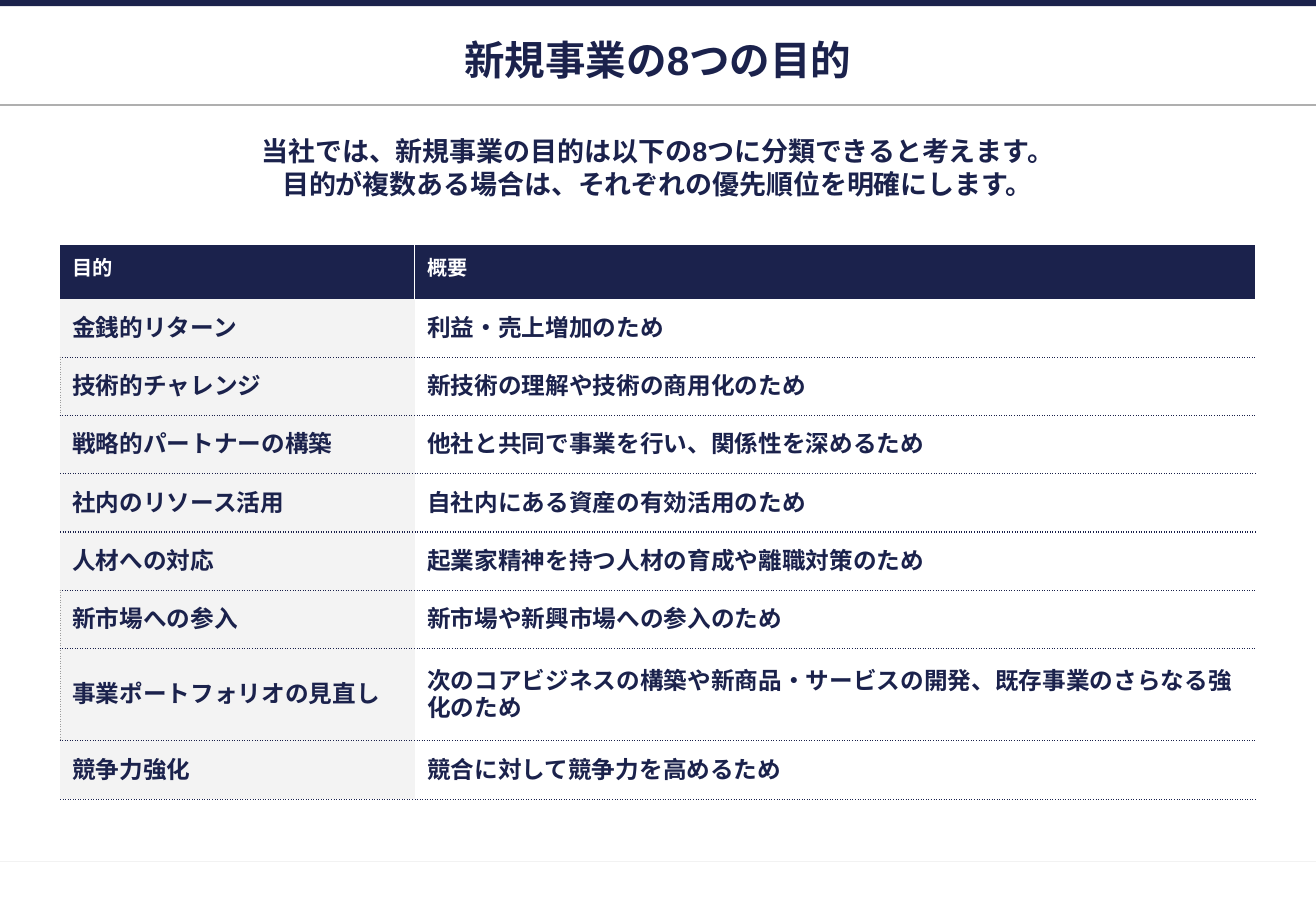
from dataclasses import dataclass
from typing import Optional

from lxml.etree import SubElement
from pptx import Presentation
from pptx.dml.color import RGBColor
from pptx.enum.shapes import MSO_CONNECTOR, MSO_SHAPE
from pptx.enum.text import MSO_ANCHOR, PP_ALIGN
from pptx.oxml.ns import qn
from pptx.slide import Slide
from pptx.table import _Cell
from pptx.text.text import _Paragraph
from pptx.util import Emu, Pt


@dataclass(frozen=True)
class Theme:
    font: str = "Arial"
    navy: str = "1B224C"
    white: str = "FFFFFF"
    label_fill: str = "F3F3F3"
    title_rule: str = "AFAFAF"
    footer_rule: str = "F2F2F2"
    label_edge: str = "9E9E9E"
    title_size: int = 24
    lead_size: int = 16
    header_size: int = 12
    cell_size: int = 14
    rule_width: float = 0.75


@dataclass(frozen=True)
class TextBlock:
    left: int
    top: int
    width: int
    height: int
    lines: tuple[str, ...]
    size: int
    anchor: MSO_ANCHOR
    bottom_inset: int


@dataclass(frozen=True)
class Rule:
    top: int
    color: str


@dataclass(frozen=True)
class Purpose:
    name: str
    summary: str
    has_left_edge: bool = False
    height: int = 96


@dataclass(frozen=True)
class Edge:
    color: str
    dash: str


THEME = Theme()
PAGE_WIDTH, PAGE_HEIGHT = 2166, 1500
MARGIN, CONTENT_WIDTH = 99, 1968
TABLE_TOP, HEADER_HEIGHT, TWO_LINE_HEIGHT = 404, 88, 152
COLUMN_WIDTHS = (584, 1384)
TEXT_INSET, CELL_INSET = 8, 20
NO_STYLE_TABLE = "{2D5ABB26-0587-4C30-8999-92F81FD0307C}"

RULES = (Rule(1418, THEME.footer_rule), Rule(173, THEME.title_rule))
TEXT_BLOCKS = (
    TextBlock(MARGIN, 214, CONTENT_WIDTH, 150,
              ("当社では、新規事業の目的は以下の8つに分類できると考えます。",
               "目的が複数ある場合は、それぞれの優先順位を明確にします。"),
              THEME.lead_size, MSO_ANCHOR.TOP, TEXT_INSET),
    TextBlock(MARGIN, 60, CONTENT_WIDTH, 78, ("新規事業の8つの目的",),
              THEME.title_size, MSO_ANCHOR.MIDDLE, 10),
)
HEADINGS = ("目的", "概要")
PURPOSES = (
    Purpose("金銭的リターン", "利益・売上増加のため"),
    Purpose("技術的チャレンジ", "新技術の理解や技術の商用化のため", True),
    Purpose("戦略的パートナーの構築", "他社と共同で事業を行い、関係性を深めるため"),
    Purpose("社内のリソース活用", "自社内にある資産の有効活用のため"),
    Purpose("人材への対応", "起業家精神を持つ人材の育成や離職対策のため"),
    Purpose("新市場への参入", "新市場や新興市場への参入のため", True),
    Purpose("事業ポートフォリオの見直し",
            "次のコアビジネスの構築や新商品・サービスの開発、既存事業のさらなる強化のため",
            True, TWO_LINE_HEIGHT),
    Purpose("競争力強化", "競合に対して競争力を高めるため"),
)
DIVIDER = Edge(THEME.navy, "dot")
LABEL_EDGE = Edge(THEME.label_edge, "dot")
HEADER_EDGE = Edge(THEME.white, "solid")


def px(length: int) -> Emu:
    return Emu(length * 4572)


def rgb(color: str) -> RGBColor:
    return RGBColor.from_string(color)


def style_paragraph(para: _Paragraph, size: int, color: str) -> None:
    font = para.font
    font.name = THEME.font
    font.size = Pt(size)
    font.bold = True
    font.color.rgb = rgb(color)
    for script in ("a:ea", "a:cs"):
        SubElement(font._element, qn(script), typeface=THEME.font)


def draw_rule(page: Slide, rule: Rule) -> None:
    line = page.shapes.add_connector(
        MSO_CONNECTOR.STRAIGHT, px(0), px(rule.top), px(PAGE_WIDTH), px(rule.top))
    line.line.color.rgb = rgb(rule.color)
    line.line.width = Pt(THEME.rule_width)
    SubElement(line._element.spPr, qn("a:effectLst"))


def draw_top_band(page: Slide) -> None:
    band = page.shapes.add_shape(MSO_SHAPE.RECTANGLE, px(0), px(0), px(PAGE_WIDTH), px(10))
    band.shadow.inherit = False
    band.fill.solid()
    band.fill.fore_color.rgb = rgb(THEME.navy)
    band.line.fill.background()


def draw_text(page: Slide, block: TextBlock) -> None:
    box = page.shapes.add_textbox(
        px(block.left), px(block.top), px(block.width), px(block.height))
    frame = box.text_frame
    frame.word_wrap = True
    frame.vertical_anchor = block.anchor
    frame.margin_left = frame.margin_right = frame.margin_top = px(TEXT_INSET)
    frame.margin_bottom = px(block.bottom_inset)
    frame.text = "\n".join(block.lines)
    for para in frame.paragraphs:
        para.alignment = PP_ALIGN.CENTER
        style_paragraph(para, block.size, THEME.navy)


def set_borders(cell: _Cell, left: Optional[Edge] = None, right: Optional[Edge] = None,
                top: Optional[Edge] = None, bottom: Optional[Edge] = None) -> None:
    properties = cell._tc.get_or_add_tcPr()
    for side, edge in zip("LRTB", (left, right, top, bottom)):
        border = SubElement(properties, qn(f"a:ln{side}"), w=str(Pt(THEME.rule_width)))
        if edge is None:
            SubElement(border, qn("a:noFill"))
            continue
        fill = SubElement(border, qn("a:solidFill"))
        SubElement(fill, qn("a:srgbClr"), val=edge.color)
        SubElement(border, qn("a:prstDash"), val=edge.dash)


def fill_cell(cell: _Cell, text: str, size: int, color: str, fill: str,
              anchor: MSO_ANCHOR) -> None:
    cell.fill.solid()
    cell.fill.fore_color.rgb = rgb(fill)
    cell.vertical_anchor = anchor
    cell.margin_left = cell.margin_right = px(CELL_INSET)
    cell.margin_top = cell.margin_bottom = px(CELL_INSET)
    cell.text = text
    style_paragraph(cell.text_frame.paragraphs[0], size, color)


def draw_purpose_table(page: Slide) -> None:
    heights = (HEADER_HEIGHT, *(purpose.height for purpose in PURPOSES))
    table = page.shapes.add_table(
        len(heights), len(HEADINGS), px(MARGIN), px(TABLE_TOP),
        px(CONTENT_WIDTH), px(sum(heights))).table
    table.horz_banding = False
    table._tbl.tblPr.find(qn("a:tableStyleId")).text = NO_STYLE_TABLE
    for column, width in zip(table.columns, COLUMN_WIDTHS):
        column.width = px(width)
    for row, height in zip(table.rows, heights):
        row.height = px(height)

    for index, heading in enumerate(HEADINGS):
        cell = table.cell(0, index)
        set_borders(cell, left=HEADER_EDGE if index else None, right=HEADER_EDGE)
        fill_cell(cell, heading, THEME.header_size, THEME.white, THEME.navy, MSO_ANCHOR.TOP)

    for index, purpose in enumerate(PURPOSES, start=1):
        label, summary = table.cell(index, 0), table.cell(index, 1)
        top = DIVIDER if index > 1 else None
        set_borders(label, left=LABEL_EDGE if purpose.has_left_edge else None,
                    top=top, bottom=DIVIDER)
        set_borders(summary, top=top, bottom=DIVIDER)
        fill_cell(label, purpose.name, THEME.cell_size, THEME.navy,
                  THEME.label_fill, MSO_ANCHOR.MIDDLE)
        fill_cell(summary, purpose.summary, THEME.cell_size, THEME.navy,
                  THEME.white, MSO_ANCHOR.MIDDLE)


def main() -> None:
    deck = Presentation()
    deck.slide_width, deck.slide_height = px(PAGE_WIDTH), px(PAGE_HEIGHT)
    page = deck.slides.add_slide(deck.slide_layouts[6])
    draw_top_band(page)
    for rule in RULES:
        draw_rule(page, rule)
    for block in TEXT_BLOCKS:
        draw_text(page, block)
    draw_purpose_table(page)
    deck.save("out.pptx")


if __name__ == "__main__":
    main()
